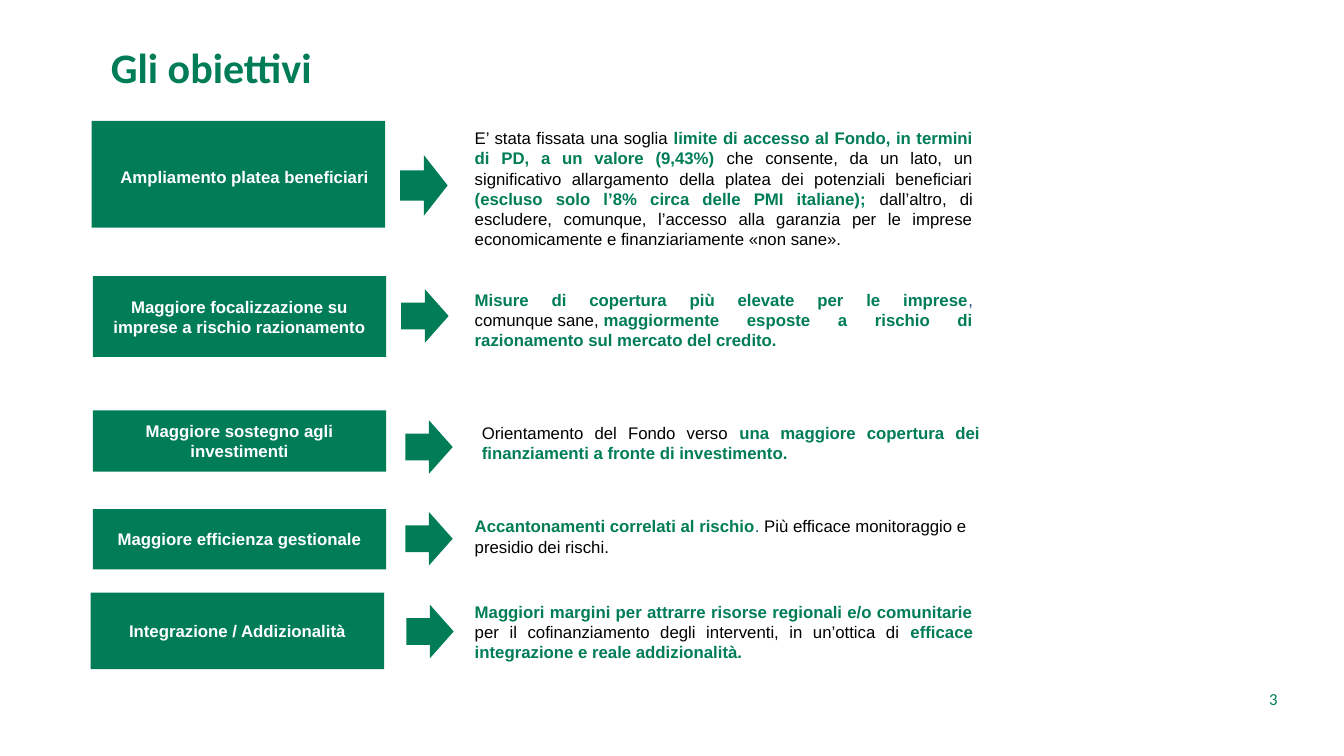
from dataclasses import dataclass

from pptx import Presentation
from pptx.dml.color import RGBColor
from pptx.enum.shapes import MSO_SHAPE
from pptx.enum.text import MSO_ANCHOR, MSO_AUTO_SIZE, PP_ALIGN
from pptx.util import Inches, Pt

RECTANGLE, ARROW = MSO_SHAPE.RECTANGLE, MSO_SHAPE.RIGHT_ARROW
TOP, MIDDLE, BOTTOM = MSO_ANCHOR.TOP, MSO_ANCHOR.MIDDLE, MSO_ANCHOR.BOTTOM
LEFT, CENTER, RIGHT, JUSTIFY = (
    PP_ALIGN.LEFT, PP_ALIGN.CENTER, PP_ALIGN.RIGHT, PP_ALIGN.JUSTIFY)
NO_AUTOSIZE = MSO_AUTO_SIZE.NONE

COLORS = {"green": "007D57", "white": "FFFFFF", "black": "000000", "navy": "1F497D"}
BODY_FONT = {"name": "Arial", "size": Pt(12)}
TITLE_FONT = {"name": "Calibri", "size": Pt(30), "bold": True}
NUMBER_FONT = {"name": "Calibri", "size": Pt(12), "bold": False}
LABEL_WIDTH, ARROW_WIDTH, TEXT_WIDTH = 2.91, 0.47, 5.12
DEFAULT_INSETS = (0.1, 0.05, 0.1, 0.05)
TEXT_INSETS = (0.1, 0, 0.08, 0)
NO_BREAK = chr(160)  # keeps the words of a phrase on one line


@dataclass(frozen=True)
class Run:
    text: str
    color: str = "black"

    @property
    def bold(self) -> bool:
        return self.color in ("green", "white")


@dataclass(frozen=True)
class Span:
    left: float
    top: float
    height: float


@dataclass(frozen=True)
class Objective:
    label: str
    box: Span
    arrow: Span
    text: Span
    runs: tuple[Run, ...]
    align: PP_ALIGN = JUSTIFY
    label_insets: tuple[float, ...] = DEFAULT_INSETS


OBJECTIVES = (
    Objective(
        "Ampliamento platea beneficiari",
        Span(0.91, 1.2, 1.06), Span(3.97, 1.54, 0.6), Span(4.61, 1.27, 1.34),
        (Run("E’ stata fissata una soglia "),
         Run("limite di accesso al Fondo, in termini di PD, a un valore (9,43%) ", "green"),
         Run("che consente, da un lato, un significativo allargamento della platea "
             "dei potenziali beneficiari "),
         Run("(escluso solo l’8% circa delle PMI italiane); ", "green"),
         Run("dall’altro, di escludere, comunque, l’accesso alla garanzia per le imprese "
             "economicamente e finanziariamente «non sane».")),
        label_insets=(0.22, 0.1, 0.1, 0.05),
    ),
    Objective(
        "Maggiore focalizzazione su imprese a rischio razionamento",
        Span(0.92, 2.74, 0.8), Span(3.98, 2.87, 0.53), Span(4.61, 2.87, 0.68),
        (Run("Misure di copertura più elevate per le imprese", "green"),
         Run(", ", "navy"),
         Run(f"comunque{NO_BREAK}sane,{NO_BREAK}"),
         Run("maggiormente esposte a rischio di razionamento sul mercato del credito.",
             "green")),
    ),
    Objective(
        "Maggiore sostegno agli investimenti",
        Span(0.92, 4.07, 0.61), Span(4.02, 4.17, 0.53), Span(4.68, 4.19, 0.49),
        (Run("Orientamento del Fondo verso "),
         Run("una maggiore copertura dei finanziamenti a fronte di investimento.", "green")),
    ),
    Objective(
        "Maggiore efficienza gestionale",
        Span(0.92, 5.05, 0.6), Span(4.02, 5.08, 0.53), Span(4.61, 5.12, 0.5),
        (Run("Accantonamenti correlati al rischio", "green"),
         Run(". ", "navy"),
         Run("Più efficace monitoraggio e presidio dei rischi.")),
        align=LEFT,
    ),
    Objective(
        "Integrazione / Addizionalità",
        Span(0.9, 5.88, 0.76), Span(4.03, 6.0, 0.53), Span(4.61, 5.97, 0.68),
        (Run("Maggiori margini per attrarre risorse regionali e/o comunitarie ", "green"),
         Run("per il cofinanziamento degli interventi, in un’ottica di "),
         Run("efficace integrazione e reale addizionalità.", "green")),
    ),
)


def rgb(color: str) -> RGBColor:
    return RGBColor.from_string(COLORS[color])


def place(span: Span, width: float) -> tuple:
    return tuple(Inches(value) for value in (span.left, span.top, width, span.height))


def write(shape, runs: tuple[Run, ...], align: PP_ALIGN, anchor: MSO_ANCHOR,
          insets: tuple[float, ...], font_format: dict) -> None:
    """Fill the single paragraph of a shape with formatted runs."""
    left, top, right, bottom = map(Inches, insets)
    frame = shape.text_frame
    frame_format = {
        "word_wrap": True, "auto_size": NO_AUTOSIZE, "vertical_anchor": anchor,
        "margin_left": left, "margin_top": top,
        "margin_right": right, "margin_bottom": bottom,
    }
    for name, value in frame_format.items():
        setattr(frame, name, value)
    paragraph = frame.paragraphs[0]
    paragraph.alignment = align
    paragraph.line_spacing = 1.0
    for part in runs:
        run = paragraph.add_run()
        run.text = part.text
        for name, value in ({"bold": part.bold} | font_format).items():
            setattr(run.font, name, value)
        run.font.color.rgb = rgb(part.color)


def add_green_shape(slide, kind: MSO_SHAPE, span: Span, width: float):
    shape = slide.shapes.add_shape(kind, *place(span, width))
    shape.shadow.inherit = False
    shape.fill.solid()
    shape.fill.fore_color.rgb = rgb("green")
    shape.line.fill.background()
    return shape


def add_objective(slide, objective: Objective) -> None:
    box = add_green_shape(slide, RECTANGLE, objective.box, LABEL_WIDTH)
    write(box, (Run(objective.label, "white"),), CENTER, MIDDLE,
          objective.label_insets, BODY_FONT)
    add_green_shape(slide, ARROW, objective.arrow, ARROW_WIDTH)
    text = slide.shapes.add_textbox(*place(objective.text, TEXT_WIDTH))
    write(text, objective.runs, objective.align, TOP, TEXT_INSETS, BODY_FONT)


def main() -> None:
    presentation = Presentation()
    presentation.slide_width, presentation.slide_height = Inches(13.33), Inches(7.5)
    slide = presentation.slides.add_slide(presentation.slide_layouts[5])

    # Title
    title = slide.shapes.title
    title.left, title.top, title.width, title.height = place(Span(1.1, 0.41, 0.51), 8.83)
    write(title, (Run("Gli obiettivi", "green"),), LEFT, TOP, (0, 0, 0, 0), TITLE_FONT)

    # Objectives: label, arrow and explanation
    for objective in OBJECTIVES:
        add_objective(slide, objective)

    # Page number
    number = slide.shapes.add_textbox(*place(Span(11.8, 6.82, 0.26), 0.97))
    write(number, (Run("3", "green"),), RIGHT, BOTTOM, DEFAULT_INSETS, NUMBER_FONT)

    presentation.save("out.pptx")


if __name__ == "__main__":
    main()
